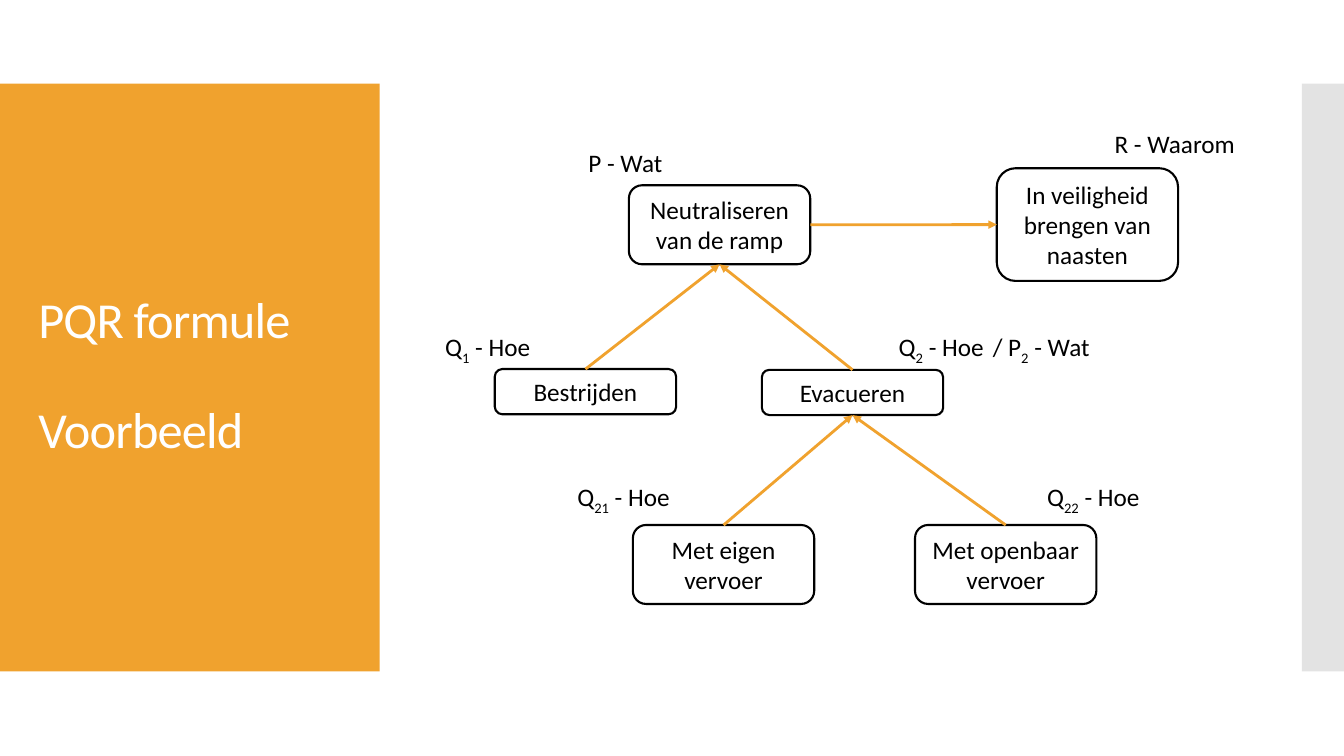
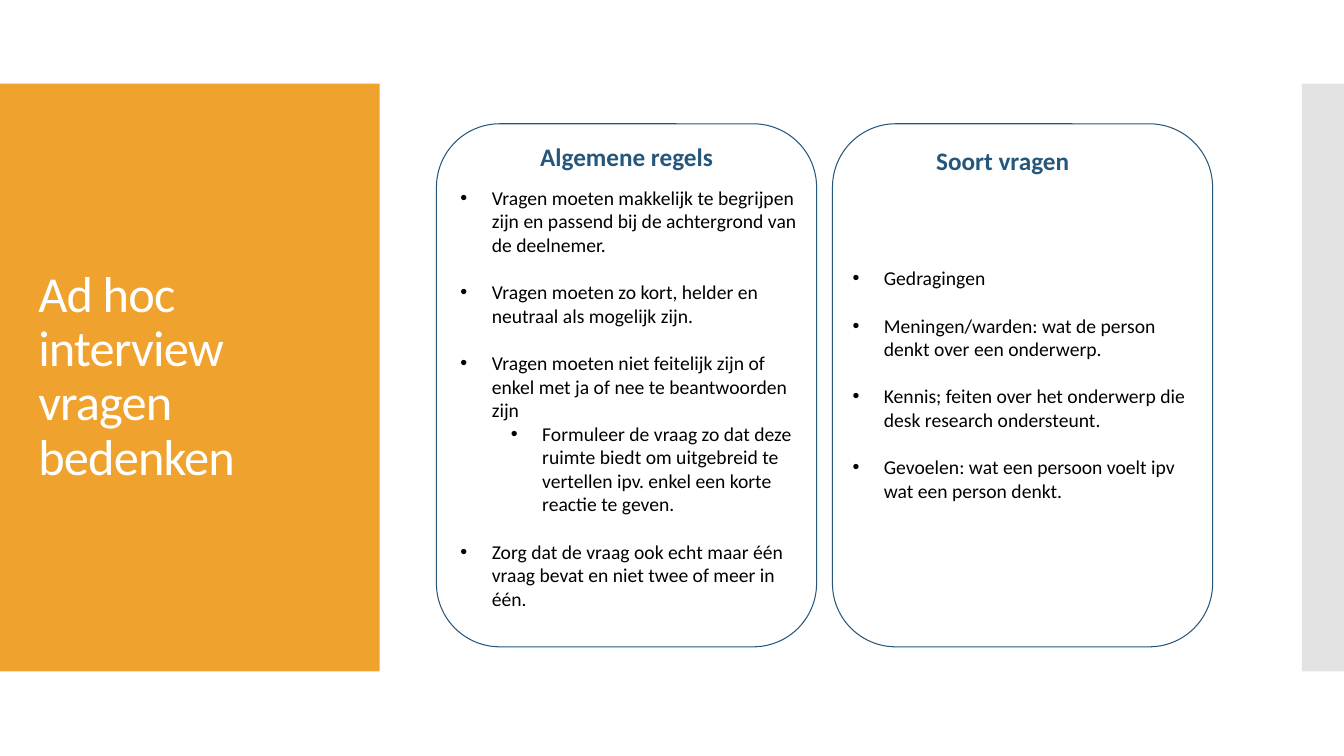
from lxml import etree
from pptx import Presentation
from pptx import util as u
from pptx.dml.color import RGBColor
from pptx.enum import shapes, text
from pptx.oxml.ns import qn

FONT = "Calibri"
ORANGE, GREY, BLUE = "F0A22E", "C8C8C8", "25567B"
BLACK, WHITE = "000000", "FFFFFF"
TITLE_ONLY, COMPARISON = 5, 4
TOP, LEFT, BOTTOM, RIGHT = range(4)
BOX_WIDTH = 4.57
CARD_LEFT, CARD_PITCH = 11, 9.98

BOXES = {
    "neutralise": ("Neutraliseren van de ramp", 15.85, 4.67, 2),
    "safety": ("In veiligheid brengen van naasten", 25.12, 4.24, 3),
    "fight": ("Bestrijden", 12.47, 9.3, 1),
    "evacuate": ("Evacueren", 19.2, 9.32, 1),
    "own": ("Met eigen vervoer", 15.95, 13.23, 2),
    "public": ("Met openbaar vervoer", 23.06, 13.23, 2),
}
ARROWS = [
    ("neutralise", RIGHT, "safety", LEFT),
    ("public", TOP, "evacuate", BOTTOM),
    ("own", TOP, "evacuate", BOTTOM),
    ("evacuate", TOP, "neutralise", BOTTOM),
    ("fight", TOP, "neutralise", BOTTOM),
]
LABELS = [
    ("P - Wat", 14.58, 3.58, 2.41),
    ("R - Waarom", 27.84, 3.1, 3.61),
    ("Q_1_ - Hoe", 10.97, 8.23, 2.74),
    ("Q_2_ - Hoe", 22.4, 8.23, 2.77),
    ("/ P_2_ - Wat", 24.77, 8.23, 2.95),
    ("Q_21_ - Hoe", 14.3, 12.01, 2.95),
    ("Q_22_ - Hoe", 26.14, 12.01, 2.97),
]
RULES = [
    (0, "Vragen moeten makkelijk te begrijpen zijn en passend bij de achtergrond van de deelnemer."),
    (0, "Vragen moeten zo kort, helder en neutraal als mogelijk zijn."),
    (0, "Vragen moeten niet feitelijk zijn of enkel met ja of nee te beantwoorden zijn"),
    (1, "Formuleer de vraag zo dat deze ruimte biedt om uitgebreid te vertellen ipv. "
        "enkel een korte reactie te geven."),
    (0, "Zorg dat de vraag ook echt maar één vraag bevat en niet twee of meer in één."),
]
KINDS = [
    (0, "Gedragingen"),
    (0, "Meningen/warden: wat de person denkt over een onderwerp."),
    (0, "Kennis; feiten over het onderwerp die desk research ondersteunt."),
    (0, "Gevoelen: wat een persoon voelt ipv wat een person denkt."),
]
CARDS = [
    ("Algemene regels", 3.43, RULES, 11.35, 4.55, 9.25, 11),
    ("Soort vragen", 3.53, KINDS, 21.23, 6.58, 9.32, 8),
]


def color(value):
    """Return the colour for a hex string."""
    return RGBColor.from_string(value)


def place(shape, left, top, width, height):
    """Move and size a shape, in centimetres."""
    shape.left, shape.top = u.Cm(left), u.Cm(top)
    shape.width, shape.height = u.Cm(width), u.Cm(height)


def format_runs(paragraph, size, hex_color, bold=False):
    """Give every run of a paragraph its font."""
    for run in paragraph.runs:
        font = run.font
        font.name, font.size, font.bold = FONT, u.Pt(size), bold
        font.color.rgb = color(hex_color)


def add_preset(slide, kind, box, fill=None, line=None, width=1.5):
    """Add a preset shape without shadow."""
    shape = slide.shapes.add_shape(kind, *map(u.Cm, box))
    shape.shadow.inherit = False
    if fill:
        shape.fill.solid()
        shape.fill.fore_color.rgb = color(fill)
    else:
        shape.fill.background()
    if line:
        shape.line.color.rgb = color(line)
        shape.line.width = u.Pt(width)
    else:
        shape.line.fill.background()
    return shape


def add_master_bands(slide):
    """Draw the side bands and move them to the slide master."""
    rectangle = shapes.MSO_SHAPE.RECTANGLE
    title_band = add_preset(slide, rectangle, (0, 2.11, 9.57, 14.81), ORANGE)
    edge_band = add_preset(slide, rectangle, (32.81, 2.11, 1.06, 14.81), GREY)
    rgb = edge_band.fill._xPr.find(".//" + qn("a:srgbClr"))
    etree.SubElement(rgb, qn("a:alpha"), val="50000")
    master_tree = slide.slide_layout.slide_master.shapes.element
    for band in (edge_band, title_band):
        master_tree.insert(2, band.element)


def set_title(slide, wording):
    """Place the white title on the orange band."""
    title = slide.shapes.title
    place(title, 0.71, 3.12, 8.18, 12.78)
    frame = title.text_frame
    frame.text = wording
    frame.auto_size = text.MSO_AUTO_SIZE.NONE
    frame.vertical_anchor = text.MSO_ANCHOR.MIDDLE
    for index, paragraph in enumerate(frame.paragraphs):
        paragraph.alignment = text.PP_ALIGN.LEFT
        paragraph.line_spacing = 0.9
        paragraph.space_before = u.Pt(39.5 if index else 0)
        format_runs(paragraph, 36, WHITE)
        for run in paragraph.runs:
            run.font._element.set("spc", "-60")


def add_box(slide, wording, left, top, lines):
    """Add an outlined box as high as its number of lines."""
    shape = add_preset(slide, shapes.MSO_SHAPE.ROUNDED_RECTANGLE,
                       (left, top, BOX_WIDTH, 0.29 + 0.85 * lines), WHITE, BLACK)
    frame = shape.text_frame
    frame.text = wording
    frame.word_wrap = True
    frame.vertical_anchor = text.MSO_ANCHOR.MIDDLE
    frame.paragraphs[0].alignment = text.PP_ALIGN.CENTER
    format_runs(frame.paragraphs[0], 18, BLACK)
    return shape


def add_arrow(slide, start, start_site, end, end_site):
    """Connect two boxes with an orange arrow."""
    arrow = slide.shapes.add_connector(shapes.MSO_CONNECTOR.STRAIGHT, 0, 0, 0, 0)
    arrow.begin_connect(start, start_site)
    arrow.end_connect(end, end_site)
    arrow.line.color.rgb = color(ORANGE)
    arrow.line.width = u.Pt(2)
    etree.SubElement(arrow.line._get_or_add_ln(), qn("a:tailEnd"), type="triangle")
    etree.SubElement(arrow.element.spPr, qn("a:effectLst"))


def add_label(slide, wording, left, top, width):
    """Add a label whose parts between underscores are subscripts."""
    label = slide.shapes.add_textbox(*map(u.Cm, (left, top, width, 1.02)))
    label.text_frame.word_wrap = False
    paragraph = label.text_frame.paragraphs[0]
    for index, part in enumerate(wording.split("_")):
        run = paragraph.add_run()
        run.text = part
        if index % 2:
            run.font._element.set("baseline", "-25000")
    format_runs(paragraph, 18, BLACK)


def fill_body(placeholder, box, wording):
    """Place a body placeholder and fill it from the top."""
    place(placeholder, *box)
    frame = placeholder.text_frame
    frame.text = wording
    frame.auto_size = text.MSO_AUTO_SIZE.NONE
    frame.vertical_anchor = text.MSO_ANCHOR.TOP
    for paragraph in frame.paragraphs:
        paragraph.space_before = u.Pt(0)
    return frame.paragraphs


def fill_list(placeholder, box, items):
    """Fill a body placeholder with bullets on two levels."""
    paragraphs = fill_body(placeholder, box, "\n".join(item for _, item in items))
    for index, (paragraph, (level, _)) in enumerate(zip(paragraphs, items)):
        paragraph.level = level
        if index and not level:
            paragraph.space_before = u.Pt(17)
        format_runs(paragraph, 14, BLACK)
        properties = paragraph._p.get_or_add_pPr()
        properties.set("marL", str(u.Cm(0.79 + 1.27 * level)))
        properties.set("indent", str(u.Cm(-0.79)))
        etree.SubElement(properties, qn("a:buFont"), typeface="Arial")
        etree.SubElement(properties, qn("a:buChar"), char="•")


def build_formula(slide):
    """Build the diagram of the PQR formula."""
    set_title(slide, "PQR formule\nVoorbeeld")
    boxes = {name: add_box(slide, *values) for name, values in BOXES.items()}
    for start, start_site, end, end_site in ARROWS:
        add_arrow(slide, boxes[start], start_site, boxes[end], end_site)
    for label in LABELS:
        add_label(slide, *label)


def build_questions(slide):
    """Build the two cards about interview questions."""
    set_title(slide, "Ad hoc interview vragen bedenken")
    for index, (heading, heading_top, items, *list_box) in enumerate(CARDS):
        left = CARD_LEFT + index * CARD_PITCH
        add_preset(slide, shapes.MSO_SHAPE.ROUNDED_RECTANGLE,
                   (left, 3.12, 9.58, 13.18), line=BLUE, width=0.75)
        heading_holder = slide.placeholders[1 + 2 * index]
        paragraphs = fill_body(heading_holder, (left + 2.36, heading_top, 8.43, 1.47), heading)
        format_runs(paragraphs[0], 18, BLUE, bold=True)
        fill_list(slide.placeholders[2 + 2 * index], list_box, items)


def main():
    """Build and save the presentation."""
    presentation = Presentation()
    presentation.slide_width, presentation.slide_height = u.Cm(33.87), u.Cm(19.05)
    layouts = presentation.slide_layouts
    formula = presentation.slides.add_slide(layouts[TITLE_ONLY])
    add_master_bands(formula)
    build_formula(formula)
    build_questions(presentation.slides.add_slide(layouts[COMPARISON]))
    presentation.save("out.pptx")


if __name__ == "__main__":
    main()
